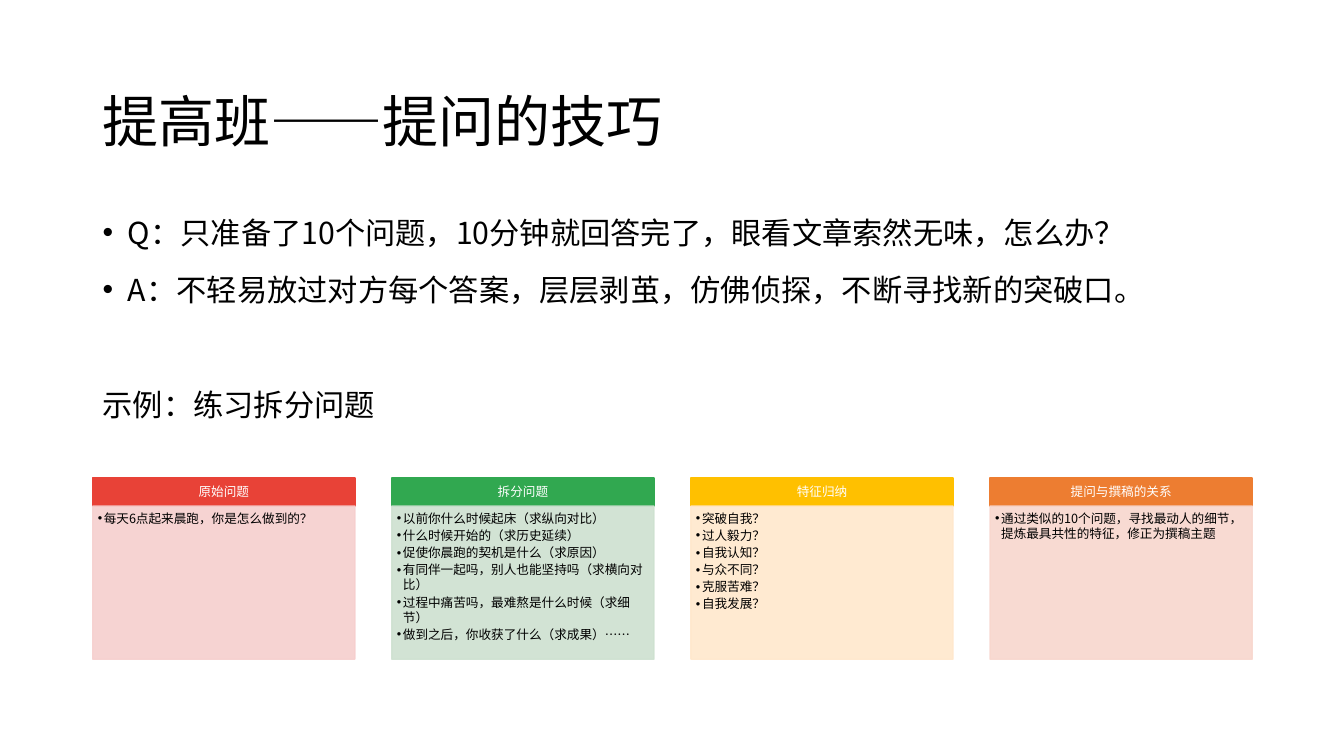
"""Build the slide on questioning techniques with four coloured example cards."""
import pptx
import pptx.util
import pptx.dml.color
import pptx.enum.shapes
import pptx.enum.text
import pptx.oxml
import pptx.oxml.ns

Inches = pptx.util.Inches
Pt = pptx.util.Pt
RGBColor = pptx.dml.color.RGBColor
ALIGN = pptx.enum.text.PP_ALIGN
ANCHOR = pptx.enum.text.MSO_ANCHOR
qn = pptx.oxml.ns.qn

FONT = "Noto Sans CJK SC"
BLACK = RGBColor(0x00, 0x00, 0x00)
WHITE = RGBColor(0xFF, 0xFF, 0xFF)
RED = RGBColor(0xE8, 0x42, 0x37)
PINK = RGBColor(0xF6, 0xCF, 0xCE)
GREEN = RGBColor(0x31, 0xA8, 0x50)
MINT = RGBColor(0xCE, 0xE1, 0xD0)
YELLOW = RGBColor(0xFF, 0xC0, 0x00)
CREAM = RGBColor(0xFF, 0xE8, 0xCC)
ORANGE = RGBColor(0xED, 0x7D, 0x31)
PEACH = RGBColor(0xF8, 0xD7, 0xCE)

LEFT = 0.92
CARD_TOP = 4.74
CARD_WIDTH = 2.6
HEADER_HEIGHT = 0.28
CARD_BODY_HEIGHT = 1.52
CARD_PITCH = (9.82 - LEFT) / 3

CARDS = [
    ("原始问题", RED, PINK, ["每天6点起来晨跑，你是怎么做到的？"]),
    ("拆分问题", GREEN, MINT, [
        "以前你什么时候起床（求纵向对比）",
        "什么时候开始的（求历史延续）",
        "促使你晨跑的契机是什么（求原因）",
        "有同伴一起吗，别人也能坚持吗（求横向对比）",
        "过程中痛苦吗，最难熬是什么时候（求细节）",
        "做到之后，你收获了什么（求成果）……",
    ]),
    ("特征归纳", YELLOW, CREAM, [
        "突破自我？", "过人毅力？", "自我认知？",
        "与众不同？", "克服苦难？", "自我发展？",
    ]),
    ("提问与撰稿的关系", ORANGE, PEACH, [
        "通过类似的10个问题，寻找最动人的细节，提炼最具共性的特征，修正为撰稿主题",
    ]),
]


def add_para(frame, text, size, color=BLACK, align=ALIGN.LEFT, spacing=1.0,
             before=0, after=0, indent=None):
    """Add a formatted paragraph, with a hanging bullet when indent is given."""
    first = frame.paragraphs[0]
    para = frame.add_paragraph() if first.runs else first
    para.alignment = align
    para.line_spacing = spacing
    para.space_before = Pt(before)
    para.space_after = Pt(after)
    if indent:
        properties = para._p.get_or_add_pPr()
        properties.set("marL", str(Inches(indent)))
        properties.set("indent", str(-Inches(indent)))
        bullet_font = pptx.oxml.parse_xml(
            f'<a:buFont {pptx.oxml.ns.nsdecls("a")} typeface="Arial"/>')
        properties.append(bullet_font)
        bullet = properties.makeelement(qn("a:buChar"), {"char": "•"})
        properties.append(bullet)
    span = para.add_run()
    span.text = text
    span.font.size = Pt(size)
    span.font.color.rgb = color
    span.font.name = FONT
    run_properties = span._r.get_or_add_rPr()
    run_properties.append(
        run_properties.makeelement(qn("a:ea"), {"typeface": FONT}))


def set_frame(frame, anchor, insets):
    """Set wrapping, anchor and the left, top, right and bottom insets."""
    frame.word_wrap = True
    frame.vertical_anchor = anchor
    (frame.margin_left, frame.margin_top,
     frame.margin_right, frame.margin_bottom) = map(Inches, insets)
    return frame


def add_text_box(page, left, top, width, height, anchor):
    """Add a text box and return its frame."""
    box = page.shapes.add_textbox(*map(Inches, (left, top, width, height)))
    return set_frame(box.text_frame, anchor, (0.1, 0.05, 0.1, 0.05))


def add_panel(page, left, top, height, color, anchor, insets, opacity=100):
    """Add a card rectangle and return its frame."""
    panel = page.shapes.add_shape(
        pptx.enum.shapes.MSO_SHAPE.RECTANGLE,
        *map(Inches, (left, top, CARD_WIDTH, height)))
    panel.shadow.inherit = False
    panel.line.width = Pt(1)
    for fill in (panel.fill, panel.line.fill):
        fill.solid()
        fill.fore_color.rgb = color
    if opacity < 100:
        for tint in panel._element.spPr.iter(qn("a:srgbClr")):
            tint.append(tint.makeelement(
                qn("a:alpha"), {"val": str(opacity * 1000)}))
    return set_frame(panel.text_frame, anchor, insets)


def add_card(page, left, heading, dark, light, points):
    """Add a card with a coloured header and a bulleted body."""
    header = add_panel(page, left, CARD_TOP, HEADER_HEIGHT, dark,
                       ANCHOR.MIDDLE, (0.07, 0.04, 0.07, 0.04))
    add_para(header, heading, 9, color=WHITE, align=ALIGN.CENTER)
    body = add_panel(page, left, CARD_TOP + HEADER_HEIGHT, CARD_BODY_HEIGHT,
                     light, ANCHOR.TOP, (0.05, 0.05, 0.07, 0.08), opacity=90)
    for point in points:
        add_para(body, point, 9, after=1.35, indent=0.06)


def main():
    """Build and save the deck."""
    deck = pptx.Presentation()
    deck.slide_width = Inches(13.33)
    deck.slide_height = Inches(7.5)
    page = deck.slides.add_slide(deck.slide_layouts[6])

    title = add_text_box(page, LEFT, 0.4, 11.5, 1.45, ANCHOR.MIDDLE)
    add_para(title, "提高班——提问的技巧", 40, spacing=1.2)

    body = add_text_box(page, LEFT, 2, 11.81, 2.58, ANCHOR.TOP)
    add_para(body, "Q：只准备了10个问题，10分钟就回答完了，眼看文章索然无味，怎么办？",
             21.6, spacing=1.2, indent=0.25)
    add_para(body, "A：不轻易放过对方每个答案，层层剥茧，仿佛侦探，不断寻找新的突破口。",
             21.6, spacing=1.2, before=10, indent=0.25)
    add_para(body, "示例：练习拆分问题", 21.6, spacing=1.2, before=51)

    for index, card in enumerate(CARDS):
        add_card(page, LEFT + index * CARD_PITCH, *card)

    deck.save("out.pptx")


if __name__ == "__main__":
    main()
